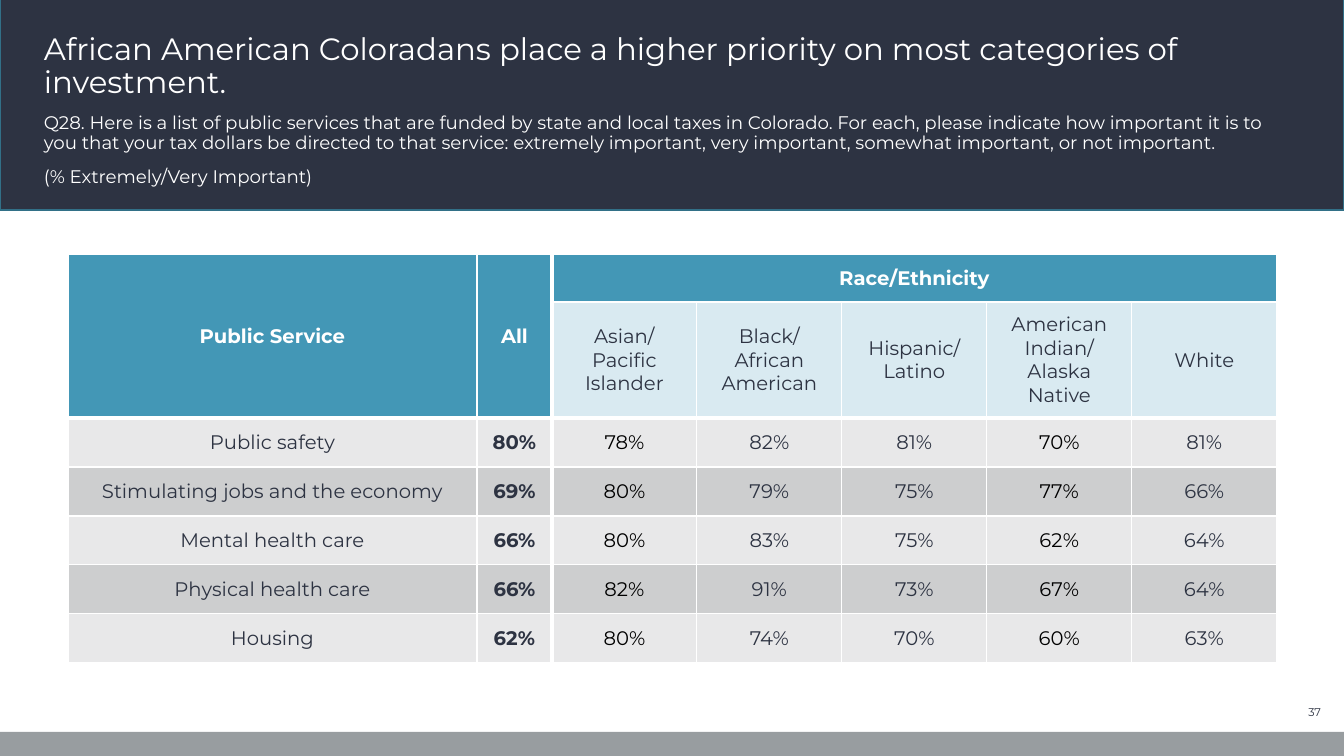
"""Build the slide on public service priorities by race and ethnicity."""
from lxml import etree
from pptx import Presentation
from pptx.dml.color import RGBColor
from pptx.enum.shapes import MSO_SHAPE
from pptx.enum.text import MSO_ANCHOR, PP_ALIGN
from pptx.oxml.ns import qn
from pptx.util import Pt

TITLE = "African American Coloradans place a higher priority on most categories of investment."
QUESTION = [
    "Q28. Here is a list of public services that are funded by state and local taxes in Colorado. "
    "For each, please indicate how important it is to you that your tax dollars be directed to that "
    "service: extremely important, very important, somewhat important, or not important.",
    "(% Extremely/Very Important)",
]
PAGE_NUMBER = "37"
ROWS = [
    ("Public Service", "All", "Race/Ethnicity", "", "", "", ""),
    ("", "", "Asian/\vPacific\vIslander", "Black/\vAfrican American", "Hispanic/\vLatino",
     "American Indian/ Alaska Native", "White"),
    ("Public safety", "80%", "78%", "82%", "81%", "70%", "81%"),
    ("Stimulating jobs and the economy", "69%", "80%", "79%", "75%", "77%", "66%"),
    ("Mental health care", "66%", "80%", "83%", "75%", "62%", "64%"),
    ("Physical health care", "66%", "82%", "91%", "73%", "67%", "64%"),
    ("Housing", "62%", "80%", "74%", "70%", "60%", "63%"),
]
MERGES = [((0, 0), (1, 0)), ((0, 1), (1, 1)), ((0, 2), (0, 6))]
COLUMN_WIDTHS = [409, 75] + [145] * 5
ROW_HEIGHTS = [48, 116] + [49] * 5
HEADER_ROWS = 2
ALL_COLUMN = 1
BLACK_TEXT_COLUMNS = (2, 5)

FONT = "Montserrat"
WHITE = RGBColor(0xFF, 0xFF, 0xFF)
BLACK = RGBColor(0x00, 0x00, 0x00)
INK = RGBColor(0x2D, 0x33, 0x42)
BANNER_EDGE = RGBColor(0x32, 0x70, 0x87)
FOOTER_GREY = RGBColor(0x98, 0x9D, 0xA0)
TEAL = RGBColor(0x43, 0x97, 0xB6)
PALE_BLUE = RGBColor(0xD9, 0xEA, 0xF1)
BANDS = (RGBColor(0xE8, 0xE8, 0xE9), RGBColor(0xCD, 0xCE, 0xCF))

RECTANGLE = MSO_SHAPE.RECTANGLE
LEFT, CENTER, RIGHT = PP_ALIGN.LEFT, PP_ALIGN.CENTER, PP_ALIGN.RIGHT
TOP, MIDDLE, BOTTOM = MSO_ANCHOR.TOP, MSO_ANCHOR.MIDDLE, MSO_ANCHOR.BOTTOM
EMU_PER_PX = 914400 / 100.8


def px(length):
    return round(length * EMU_PER_PX)


def style(para, size, color, align=LEFT, bold=False):
    para.alignment = align
    for span in para.runs:
        span.font.name = FONT
        span.font.size = Pt(size)
        span.font.bold = bold
        span.font.color.rgb = color


def add_bar(page, place, fill, edge=None):
    bar = page.shapes.add_shape(RECTANGLE, *map(px, place))
    bar.shadow.inherit = False
    bar.fill.solid()
    bar.fill.fore_color.rgb = fill
    if edge is None:
        bar.line.fill.background()
    else:
        bar.line.color.rgb = edge
        bar.line.width = Pt(1)


def add_text(page, place, lines, size, color, anchor, align=LEFT):
    frame = page.shapes.add_textbox(*map(px, place)).text_frame
    frame.word_wrap = True
    frame.vertical_anchor = anchor
    frame.text = "\n".join(lines)
    for index, para in enumerate(frame.paragraphs):
        para.line_spacing = 0.9
        if index:
            para.space_before = Pt(10)
        style(para, size, color, align)


def set_borders(cell, row, column):
    thick = {
        "a:lnL": column == ALL_COLUMN + 1,
        "a:lnR": column == ALL_COLUMN,
        "a:lnT": row == HEADER_ROWS,
        "a:lnB": row == HEADER_ROWS - 1 or (row == 0 and column <= ALL_COLUMN),
    }
    properties = cell._tc.get_or_add_tcPr()
    for tag, is_thick in thick.items():
        line = etree.SubElement(properties, qn(tag), w=str(Pt(3 if is_thick else 1)))
        fill = etree.SubElement(line, qn("a:solidFill"))
        etree.SubElement(fill, qn("a:srgbClr"), val=str(WHITE))


def cell_look(row, column):
    if row == 0 or (row < HEADER_ROWS and column <= ALL_COLUMN):
        return TEAL, WHITE, True
    if row < HEADER_ROWS:
        return PALE_BLUE, INK, False
    color = BLACK if column in BLACK_TEXT_COLUMNS else INK
    return BANDS[(row - HEADER_ROWS) % 2], color, column == ALL_COLUMN


def add_results(page):
    place = (68, 254, sum(COLUMN_WIDTHS), sum(ROW_HEIGHTS))
    table = page.shapes.add_table(len(ROWS), len(COLUMN_WIDTHS), *map(px, place)).table
    for column, width in zip(table.columns, COLUMN_WIDTHS):
        column.width = px(width)
    for row, height in zip(table.rows, ROW_HEIGHTS):
        row.height = px(height)
    for row, texts in enumerate(ROWS):
        for column, text in enumerate(texts):
            cell = table.cell(row, column)
            fill, color, bold = cell_look(row, column)
            set_borders(cell, row, column)
            cell.fill.solid()
            cell.fill.fore_color.rgb = fill
            cell.vertical_anchor = MIDDLE
            inset = px(1 if color == BLACK else 10)
            cell.margin_left = cell.margin_right = inset
            cell.margin_top = cell.margin_bottom = inset
            cell.text_frame.text = text
            style(cell.text_frame.paragraphs[0], 14, color, CENTER, bold)
    for first, last in MERGES:
        table.cell(*first).merge(table.cell(*last))


def main():
    deck = Presentation()
    deck.slide_width, deck.slide_height = px(1344), px(756)
    page = deck.slides.add_slide(deck.slide_layouts[6])
    add_bar(page, (0, -3, 1344, 213), INK, BANNER_EDGE)
    add_bar(page, (0, 732, 1344, 24), FOOTER_GREY)
    add_text(page, (1252, 701, 79, 24), [PAGE_NUMBER], 8, INK, MIDDLE, RIGHT)
    add_text(page, (34, 109, 1274, 93), QUESTION, 13, WHITE, TOP)
    add_results(page)
    add_text(page, (34, 7, 1274, 98), [TITLE], 22, WHITE, BOTTOM)
    deck.save("out.pptx")


if __name__ == "__main__":
    main()
